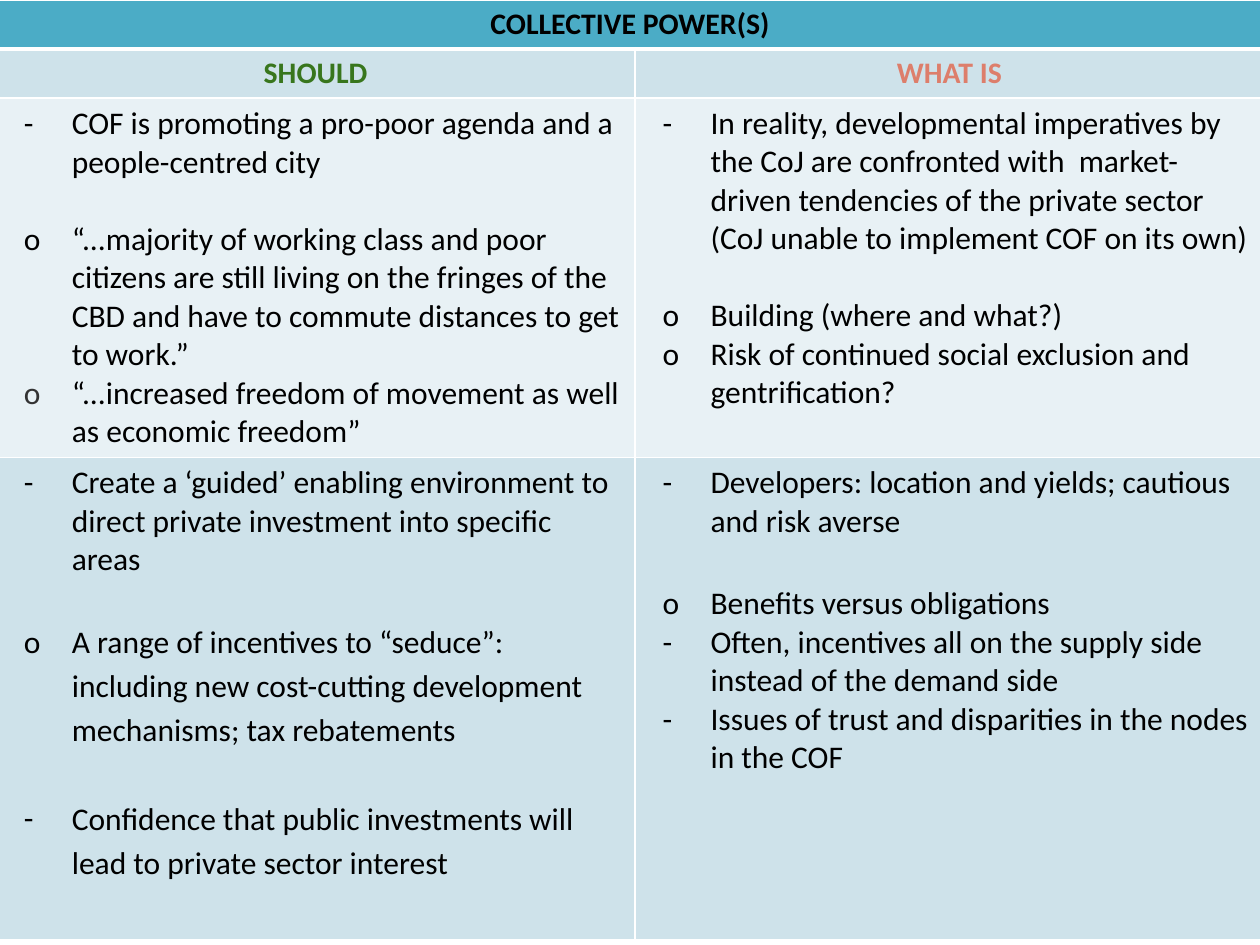
from dataclasses import dataclass

from lxml.etree import SubElement
from pptx import Presentation
from pptx.dml.color import RGBColor
from pptx.enum.text import MSO_ANCHOR, PP_ALIGN
from pptx.oxml.ns import qn
from pptx.util import Inches, Pt


@dataclass(frozen=True)
class Theme:
    font: str = "Calibri"
    head: int = 17
    body: int = 18
    line: int = 22      # height of one body line, in points
    loose: float = 1.15
    ink: str = "000000"
    grey: str = "333333"
    rule: str = "FFFFFF"
    band: str = "4BACC6"
    dark: str = "CEE2EA"
    pale: str = "E8F1F5"
    green: str = "38761D"
    coral: str = "DD7E6B"


@dataclass(frozen=True)
class Item:
    text: str
    mark: str = "-"
    gap: float = 0      # blank lines above
    lead: float = 1.0
    tint: str = Theme.ink


def apply(obj, form):
    for name, value in form.items():
        setattr(obj, name, value)


class Deck:
    def __init__(self, theme):
        self.theme = theme
        self.prs = Presentation()
        apply(self.prs, {"slide_width": Inches(10), "slide_height": Inches(7.5)})
        self.slide = self.prs.slides.add_slide(self.prs.slide_layouts[6])

    def grid(self, left, top, cols, rows):
        """Add a table; all lengths are shares of the slide's size."""
        wide, high = self.prs.slide_width, self.prs.slide_height
        table = self.slide.shapes.add_table(
            len(rows), len(cols), int(left * wide), int(top * high),
            int(sum(cols) * wide), int(sum(rows) * high)).table
        for col, share in zip(table.columns, cols):
            col.width = int(share * wide)
        for row, share in zip(table.rows, rows):
            row.height = int(share * high)
        return table

    def cell(self, cell, fill, anchor=MSO_ANCHOR.TOP, **thick):
        """Set a cell's edges, margins and fill; thick maps a side to points."""
        apply(cell, {"margin_left": Inches(0.1), "margin_right": Inches(0.1),
                     "margin_top": Inches(0.05), "margin_bottom": Inches(0.05),
                     "vertical_anchor": anchor})
        props = cell._tc.get_or_add_tcPr()
        for side in "LRTB":
            edge = SubElement(props, qn(f"a:ln{side}"), w=str(Pt(thick.get(side, 1))))
            SubElement(SubElement(edge, qn("a:solidFill")),
                       qn("a:srgbClr"), val=self.theme.rule)
        cell.fill.solid()
        cell.fill.fore_color.rgb = RGBColor.from_string(fill)

    def words(self, para, text, size, tint, bold=False):
        run = para.add_run()
        run.text = text
        apply(run.font, {"name": self.theme.font, "size": Pt(size), "bold": bold})
        run.font.color.rgb = RGBColor.from_string(tint)

    def head(self, cell, text, tint):
        para = cell.text_frame.paragraphs[0]
        para.alignment = PP_ALIGN.CENTER
        self.words(para, text, self.theme.head, tint, True)

    def items(self, cell, items):
        frame = cell.text_frame
        for i, item in enumerate(items):
            para = frame.add_paragraph() if i else frame.paragraphs[0]
            props = para._p.get_or_add_pPr()
            props.set("marL", str(Inches(0.5)))
            props.set("indent", str(Inches(-0.38)))
            SubElement(SubElement(props, qn("a:buClr")), qn("a:srgbClr"), val=item.tint)
            SubElement(props, qn("a:buFont"), typeface=self.theme.font)
            SubElement(props, qn("a:buChar"), char=item.mark)
            apply(para, {"line_spacing": item.lead,
                         "space_before": Pt(item.gap * self.theme.line)})
            self.words(para, item.text, self.theme.body, self.theme.ink)


def main():
    theme = Theme()
    deck = Deck(theme)
    table = deck.grid(-0.003, 0, (0.507, 0.499), (0.052, 0.052, 0.38, 0.51))

    # Cell fills and white rules
    fills = (theme.band, theme.dark, theme.pale, theme.dark)
    edges = ({"B": 3}, {"T": 3}, {}, {})
    for r, (fill, edge) in enumerate(zip(fills, edges)):
        for c in range(2):
            low = (r, c) == (2, 0)
            deck.cell(table.cell(r, c), fill,
                      MSO_ANCHOR.BOTTOM if low else MSO_ANCHOR.TOP, **edge)

    # Headings
    table.cell(0, 0).merge(table.cell(0, 1))
    deck.head(table.cell(0, 0), "COLLECTIVE POWER(S)", theme.ink)
    deck.head(table.cell(1, 0), "SHOULD", theme.green)
    deck.head(table.cell(1, 1), "WHAT IS", theme.coral)

    # Lists, row by row
    loose = theme.loose
    lists = (
        ((Item("COF is promoting a pro-poor agenda and a people-centred city"),
          Item("“...majority of working class and poor citizens are still living on the "
               "fringes of the CBD and have to commute distances to get to work.”", "o", 1),
          Item("“...increased freedom of movement as well as economic freedom”", "o",
               tint=theme.grey)),
         (Item("In reality, developmental imperatives by the CoJ are confronted with  "
               "market-driven tendencies of the private sector (CoJ unable to implement "
               "COF on its own)"),
          Item("Building (where and what?)", "o", 1),
          Item("Risk of continued social exclusion and gentrification?", "o"))),
        ((Item("Create a ‘guided’ enabling environment to direct private investment into "
               "specific areas"),
          Item("A range of incentives to “seduce”: including new cost-cutting development "
               "mechanisms; tax rebatements", "o", 1, loose),
          Item("Confidence that public investments will lead to private sector interest",
               "-", loose, loose)),
         (Item("Developers: location and yields; cautious and risk averse"),
          Item("Benefits versus obligations", "o", 1, loose),
          Item("Often, incentives all on the supply side instead of the demand side"),
          Item("Issues of trust and disparities in the nodes in the COF"))),
    )
    for r, row in enumerate(lists, 2):
        for c, items in enumerate(row):
            deck.items(table.cell(r, c), items)

    deck.prs.save("out.pptx")


if __name__ == "__main__":
    main()
